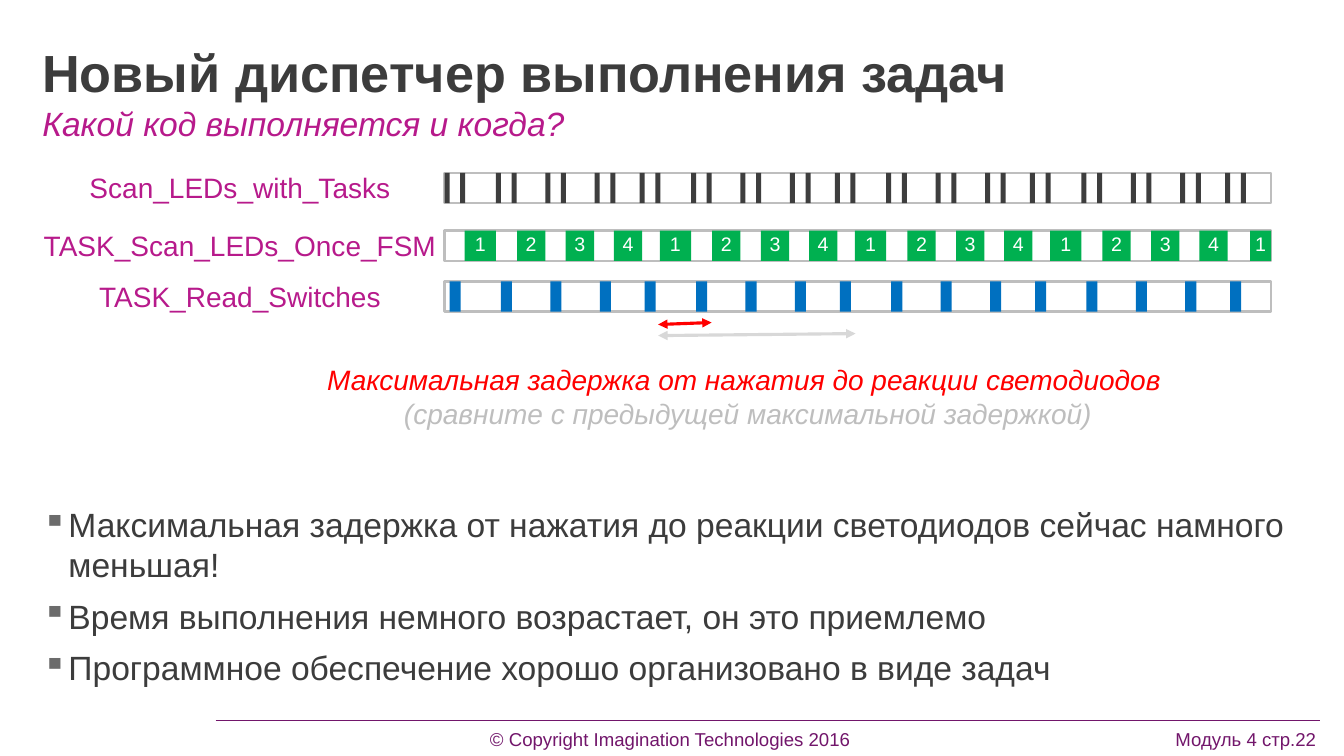
import pptx
import pptx.util
import pptx.dml.color
import pptx.enum.shapes
import pptx.enum.text
import pptx.oxml
import pptx.oxml.ns

Pt = pptx.util.Pt
RGB = pptx.dml.color.RGBColor.from_string
ALIGN = pptx.enum.text.PP_ALIGN
ANCHOR = pptx.enum.text.MSO_ANCHOR
SHAPE = pptx.enum.shapes.MSO_SHAPE
LINE = pptx.enum.shapes.MSO_CONNECTOR.STRAIGHT

COLORS = {
    "text": "3C3C3C", "accent": "B71A8B", "footer": "72166B", "bullet": "6B6B6B",
    "frame": "BEBEBE", "scan": "3E3E3E", "led": "00B050", "switch": "0070C0",
    "delay": "FF0000", "old_delay": "D8D8D8", "white": "FFFFFF",
}
FONT = "Arial"
CYCLE = 139.4
SLOTS = (0, 36.7, 72, 107.3)
LED_SLOTS = ((14.4, 22.4), (51.8, 20.2), (86.6, 20.2), (121, 20.2))
RUNS = 17


def sub(parent, tag, **attrs):
    """Append an XML element with the given attributes and return it."""
    el = parent.makeelement(pptx.oxml.ns.qn(tag), attrs)
    parent.append(el)
    return el


def add_run(p, text, size=20, color="text", bold=False, italic=False):
    """Add a formatted run to a paragraph."""
    r = p.add_run()
    r.text = text
    r.font.name = FONT
    r.font.size = Pt(size)
    r.font.bold = bold
    r.font.italic = italic
    r.font.color.rgb = RGB(COLORS[color])


def add_text(s, text, box, inset=(0, 0), align=ALIGN.LEFT, spacing=None, wrap=True, **fmt):
    """Add a text box with one formatted paragraph and return the paragraph."""
    tf = s.shapes.add_textbox(*map(Pt, box)).text_frame
    tf.word_wrap = wrap
    tf.margin_left = tf.margin_right = Pt(inset[0])
    tf.margin_top = tf.margin_bottom = Pt(inset[1])
    p = tf.paragraphs[0]
    p.alignment = align
    p.line_spacing = spacing
    add_run(p, text, **fmt)
    return p


def add_rect(s, box, fill=None, line=None):
    """Add a plain rectangle with an optional fill and outline."""
    sp = s.shapes.add_shape(SHAPE.RECTANGLE, *map(Pt, box))
    sp.shadow.inherit = False
    if fill:
        sp.fill.solid()
        sp.fill.fore_color.rgb = RGB(COLORS[fill])
    else:
        sp.fill.background()
    if line:
        sp.line.color.rgb = RGB(COLORS[line])
        sp.line.width = Pt(1.75)
    else:
        sp.line.fill.background()
    return sp


def add_line(s, start, end, color, width, arrows=False):
    """Add a straight line, with arrowheads at both ends if asked."""
    cn = s.shapes.add_connector(LINE, *map(Pt, start + end))
    cn.line.color.rgb = RGB(COLORS[color])
    cn.line.width = Pt(width)
    if arrows:
        ln = cn.line._get_or_add_ln()
        sub(ln, "a:headEnd", type="triangle")
        sub(ln, "a:tailEnd", type="triangle")
    sub(cn._element.spPr, "a:effectLst")


def add_label(s, text, box):
    """Add the task name, centred on the left of a timeline row."""
    x, y, w, h = box
    add_text(s, text, (14.4, y - 4.5, 314, 30), (6.5, 3), ALIGN.CENTER, color="accent")


def ticks_row(s, name, box, color, width, starts):
    """Draw a timeline row with thin bars repeated in every slot."""
    x, y, w, h = box
    add_label(s, name, box)
    add_rect(s, box, line="frame")
    for i in range(RUNS):
        cycle, slot = divmod(i, len(SLOTS))
        for start in starts:
            add_rect(s, (x + start + cycle * CYCLE + SLOTS[slot], y, width, h), color)


def led_row(s, name, box):
    """Draw a timeline row with numbered blocks, the last cut by the frame."""
    x, y, w, h = box
    add_label(s, name, box)
    add_rect(s, box, line="frame")
    for i in range(RUNS):
        cycle, slot = divmod(i, len(LED_SLOTS))
        start, width = LED_SLOTS[slot]
        left = start + cycle * CYCLE
        if i == RUNS - 1:
            width = 15
            left = w - width
        sp = add_rect(s, (x + left, y, width, h), "led")
        tf = sp.text_frame
        tf.margin_left = tf.margin_right = tf.margin_top = tf.margin_bottom = 0
        tf.vertical_anchor = ANCHOR.MIDDLE
        p = tf.paragraphs[0]
        p.alignment = ALIGN.CENTER
        p.line_spacing = 0.8
        add_run(p, str(slot + 1), 14, "white")


def timeline(s, box):
    """Draw the three task rows and the delay arrows with their caption."""
    x, y, w, h = box
    ticks_row(s, "Scan_LEDs_with_Tasks", (x, y, w, h), "scan", 3.6, (0, 11.2))
    led_row(s, "TASK_Scan_LEDs_Once_FSM", (x, y + 41.2, w, h))
    ticks_row(s, "TASK_Read_Switches", (x, y + 77.5, w, h), "switch", 7.9, (3.6,))
    left = x + 152.6
    add_line(s, (left, y + 108.2), (left + 38.2, y + 106.8), "delay", 2.25, True)
    add_line(s, (left, y + 116.1), (left + 141, y + 114.7), "old_delay", 2.25, True)
    p = add_text(s, "Максимальная задержка от нажатия до реакции светодиодов ",
                 (x - 92.1, y + 132.5, 617.8, 54.7), (6.5, 3), ALIGN.CENTER,
                 wrap=False, color="delay", italic=True)
    p.add_line_break()
    add_run(p, "(сравните с предыдущей максимальной задержкой)", color="frame", italic=True)


def heading(s, box):
    """Write the title and the subtitle."""
    x, y, w, h = box
    add_text(s, "Новый диспетчер выполнения задач", (x, y, w, 34), spacing=0.85,
             wrap=False, size=37.3, bold=True)
    add_text(s, "Какой код выполняется и когда?", (x, y + 38.2, w, 22.3),
             size=24, color="accent", italic=True)


def bullets(s, items, box):
    """Write the bulleted conclusions."""
    tf = s.shapes.add_textbox(*map(Pt, box)).text_frame
    tf.word_wrap = True
    tf.margin_left = tf.margin_right = tf.margin_top = tf.margin_bottom = 0
    for i, item in enumerate(items):
        p = tf.add_paragraph() if i else tf.paragraphs[0]
        p.space_after = Pt(8)
        pPr = p._p.get_or_add_pPr()
        pPr.set("marL", str(Pt(18.7)))
        pPr.set("indent", str(-Pt(18.7)))
        sub(sub(pPr, "a:buClr"), "a:srgbClr", val=COLORS["bullet"])
        sub(pPr, "a:buChar", char="▪")
        add_run(p, item, 24)


def footer(s, box):
    """Draw the footer rule and the copyright and page line."""
    x, y, w, h = box
    p = add_text(s, "\t© Copyright Imagination Technologies 2016\t Модуль 4 стр.22", box,
                 spacing=0.9, size=13.3, color="footer")
    tabs = sub(p._p.get_or_add_pPr(), "a:tabLst")
    for pos, algn in ((461.5, "ctr"), (923, "r")):
        sub(tabs, "a:tab", pos=str(Pt(pos)), algn=algn)
    add_line(s, (154.1, y - 7.2), (x + w, y - 7.2), "footer", 0.5)


def main():
    """Build the slide and save it."""
    prs = pptx.Presentation()
    prs.slide_width, prs.slide_height = Pt(960), Pt(540)
    s = prs.slides.add_slide(prs.slide_layouts[6])
    footer(s, (17.3, 522, 925.5, 14.4))
    heading(s, (30.2, 35.3, 913, 61))
    bullets(s, (
        "Максимальная задержка от нажатия до реакции светодиодов сейчас намного меньшая!",
        "Время выполнения немного возрастает, он это приемлемо",
        "Программное обеспечение хорошо организовано в виде задач",
    ), (30.2, 360, 913, 154))
    timeline(s, (317.5, 123.6, 590.4, 21.6))
    prs.save("out.pptx")


if __name__ == "__main__":
    main()
